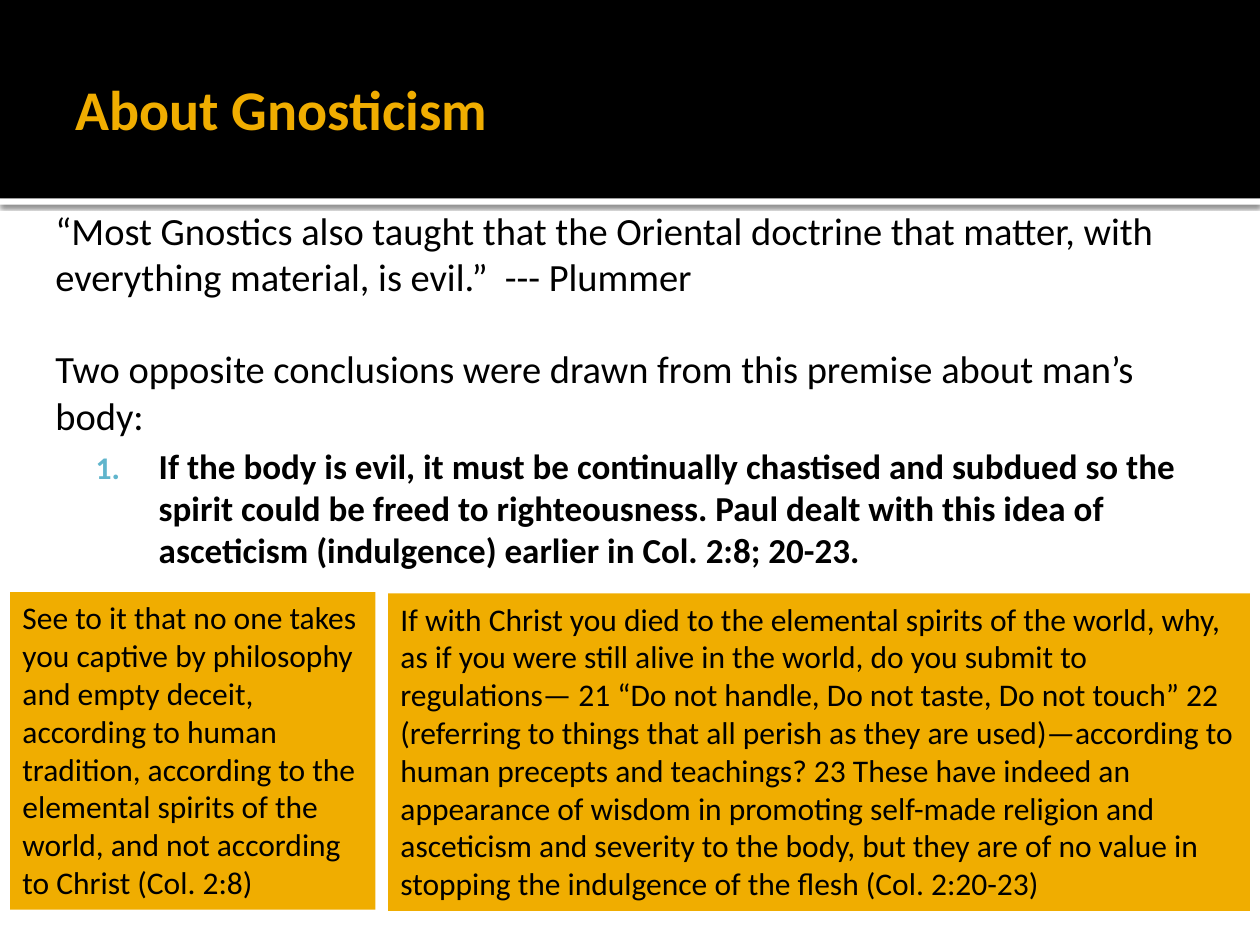
import pptx
import pptx.dml.color
import pptx.enum.shapes
import pptx.enum.text
import pptx.oxml
import pptx.oxml.ns
import pptx.util

GOLD, BLACK, WHITE, TEAL = "F0AD00", "000000", "FFFFFF", "60B5CC"
WIDTH, HEIGHT = 10, 7.5
HEADER = 0.21 * HEIGHT
Inches, Pt = pptx.util.Inches, pptx.util.Pt
NAMESPACE = pptx.oxml.ns.nsdecls("a")


def paint(format_object, color):
    """Give a fill or a font a solid colour from a hex string."""
    fill = getattr(format_object, "fill", format_object)
    fill.solid()
    fill.fore_color.rgb = pptx.dml.color.RGBColor.from_string(color)


def write(paragraph, text, size, color, bold=False):
    paragraph.alignment = pptx.enum.text.PP_ALIGN.LEFT
    run = paragraph.add_run()
    run.text = text
    for name, value in {"name": "Calibri", "size": Pt(size), "bold": bold}.items():
        setattr(run.font, name, value)
    paint(run.font, color)


presentation = pptx.Presentation()
presentation.slide_width, presentation.slide_height = Inches(WIDTH), Inches(HEIGHT)
slide = presentation.slides.add_slide(presentation.slide_layouts[1])
paint(slide.background, WHITE)
title, body = slide.placeholders

# Header band with a shadowed white rule, then the two verse boxes
verses = [
    "See to it that no one takes you captive by philosophy and empty deceit, according to human "
    "tradition, according to the elemental spirits of the world, and not according to Christ (Col. 2:8)",
    "If with Christ you died to the elemental spirits of the world, why, as if you were still alive "
    "in the world, do you submit to regulations— 21 “Do not handle, Do not taste, Do not touch” 22 "
    "(referring to things that all perish as they are used)—according to human precepts and "
    "teachings? 23 These have indeed an appearance of wisdom in promoting self-made religion and "
    "asceticism and severity to the body, but they are of no value in stopping the indulgence of "
    "the flesh (Col. 2:20-23)",
]
rectangles = [
    ((0, HEADER, WIDTH, 0.05), WHITE, None),
    ((0, 0, WIDTH, HEADER), BLACK, None),
    ((0.08, 4.7, 2.9, 2.52), GOLD, verses[0]),
    ((3.08, 4.71, 6.84, 2.52), GOLD, verses[1]),
]
shapes = []
for box, color, text in rectangles:
    shape = slide.shapes.add_shape(pptx.enum.shapes.MSO_SHAPE.RECTANGLE, *map(Inches, box))
    shape.shadow.inherit = False
    paint(shape, color)
    shape.line.fill.background()
    if text:
        shape.text_frame.word_wrap = True
        shape.text_frame.vertical_anchor = pptx.enum.text.MSO_ANCHOR.TOP
        write(shape.text_frame.paragraphs[0], text, 18, BLACK)
    shapes.append(shape)

rule, band = shapes[:2]
rule.element.spPr.find(pptx.oxml.ns.qn("a:effectLst")).append(pptx.oxml.parse_xml(
    f'<a:outerShdw {NAMESPACE} blurRad="{Pt(2.5)}" dist="{Pt(0.8)}" dir="5400000">'
    f'<a:srgbClr val="{BLACK}"><a:alpha val="60000"/></a:srgbClr></a:outerShdw>'))
for shape in (rule, band):
    title.element.addprevious(shape.element)

# Placeholders: box, then left, top, right and bottom margins
anchors = pptx.enum.text.MSO_ANCHOR
for shape, box, margins, anchor in [
    (title, (0.5, 0.17, 9, 1.37), (0.1, 0.05, 0.05, 0.05), anchors.MIDDLE),
    (body, (0.25, 1.54, 9.25, 5.46), (0.06, 0.1, 0.1, 0.05), anchors.TOP),
]:
    for name, value in zip(("left", "top", "width", "height"), box):
        setattr(shape, name, Inches(value))
    for side, value in zip(("left", "top", "right", "bottom"), margins):
        setattr(shape.text_frame, f"margin_{side}", Inches(value))
    shape.text_frame.vertical_anchor = anchor
    shape.text_frame.auto_size = pptx.enum.text.MSO_AUTO_SIZE.NONE

write(title.text_frame.paragraphs[0], "About Gnosticism", 32, GOLD, bold=True)

# Text, level, size, left margin, first-line indent, space before in points
points = [
    ("“Most Gnostics also taught that the Oriental doctrine that matter, with everything material, "
     "is evil.”  --- Plummer", 0, 22, 0.13, 0, 0),
    ("Two opposite conclusions were drawn from this premise about man’s body:", 0, 22, 0.13, 0, 26.5),
    ("If the body is evil, it must be continually chastised and subdued so the spirit could be freed "
     "to righteousness. Paul dealt with this idea of asceticism (indulgence) earlier in "
     "Col. 2:8; 20-23.", 1, 20, 0.95, -0.5, 4),
]
numbering = (f'<a:buClr {NAMESPACE}><a:srgbClr val="{TEAL}"/></a:buClr>',
             f'<a:buSzPct {NAMESPACE} val="90000"/>',
             f'<a:buFont {NAMESPACE} typeface="+mj-lt"/>',
             f'<a:buAutoNum {NAMESPACE} type="arabicPeriod"/>')
for index, (text, level, size, margin, indent, space) in enumerate(points):
    paragraph = body.text_frame.add_paragraph() if index else body.text_frame.paragraphs[0]
    paragraph.level = level
    paragraph.space_before = Pt(space)
    write(paragraph, text, size, BLACK, bold=level == 1)
    properties = paragraph._p.get_or_add_pPr()
    properties.set("marL", str(Inches(margin)))
    properties.set("indent", str(Inches(indent)))
    for bullet in numbering if level else (f"<a:buNone {NAMESPACE}/>",):
        properties.append(pptx.oxml.parse_xml(bullet))

presentation.save("out.pptx")
